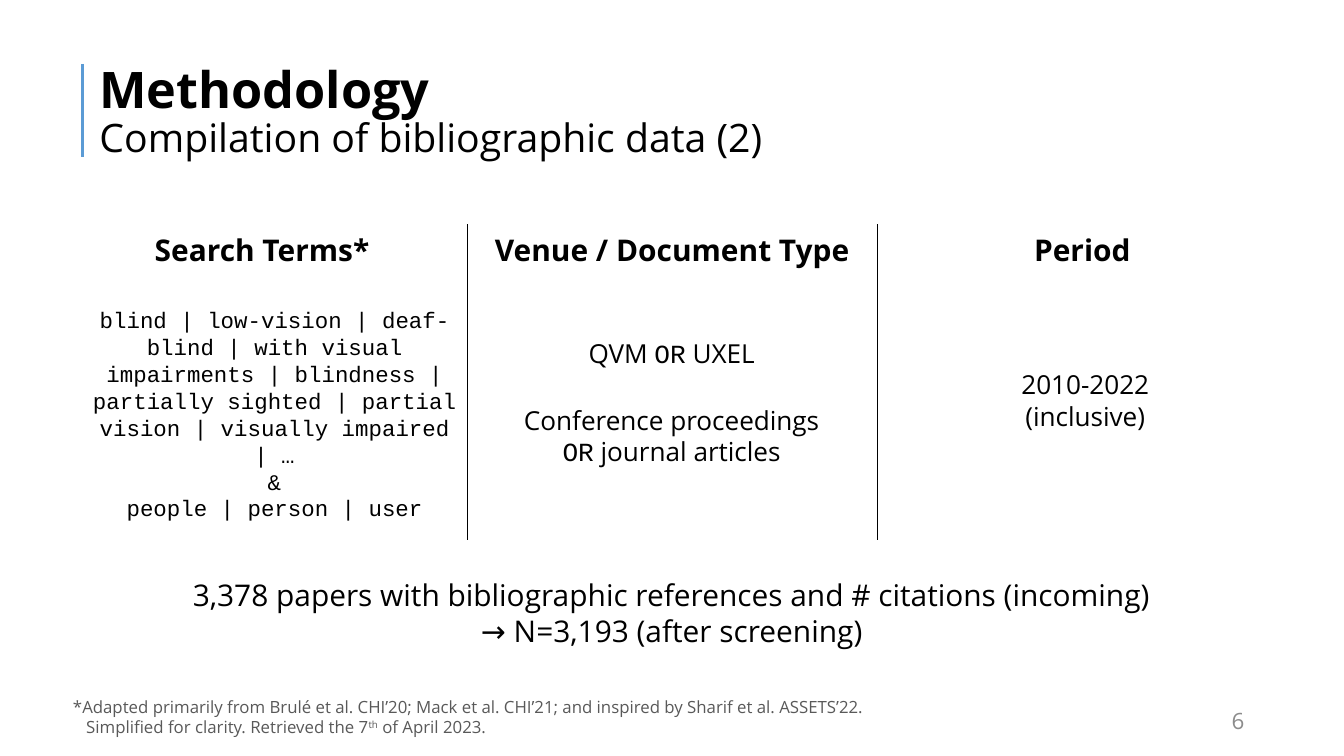
from lxml.etree import SubElement
from pptx import Presentation
from pptx.dml.color import RGBColor
from pptx.enum.shapes import MSO_CONNECTOR as Connector
from pptx.enum.text import MSO_ANCHOR as Anchor, PP_ALIGN as Align
from pptx.oxml.ns import qn
from pptx.util import Cm, Pt

BLACK = RGBColor(0x00, 0x00, 0x00)
BLUE = RGBColor(0x5B, 0x9B, 0xD5)
DARK_GRAY = RGBColor(0x59, 0x59, 0x59)
GRAY = RGBColor(0x8C, 0x8C, 0x8C)
SANS, MONO = "Open Sans", "Courier New"
NO_STYLE = "{2D5ABB26-0587-4C30-8999-92F81FD0307C}"

TITLE = [
    [("Methodology", {"size": 54, "bold": True})],
    [("Compilation of bibliographic data (2)", {"size": 42})],
]
HEADERS = ["Search Terms*", "Venue / Document Type", "Period"]
SEARCH_TERMS = [
    "blind | low-vision | deaf-blind | with visual impairments | blindness | "
    "partially sighted | partial vision | visually impaired | …",
    "&",
    "people | person | user",
]
VENUES = [
    [("QVM ", {}), ("OR", {"font": MONO}), (" UXEL", {})],
    [("Conference proceedings ", {}), ("OR", {"font": MONO}), (" journal articles", {})],
]
PERIOD = ["2010-2022 (inclusive)"]
RESULT = [
    "3,378 papers with bibliographic references and # citations (incoming)",
    "→ N=3,193 (after screening)",
]
FOOTNOTE = [
    "*Adapted primarily from Brulé et al. CHI’20; Mack et al. CHI’21; "
    "and inspired by Sharif et al. ASSETS’22.",
    [("Simplified for clarity. Retrieved the 7", {}), ("th", {"raised": True}),
     (" of April 2023.", {})],
]
PAGE_NUMBER = ["6"]

TABLE_LEFT, TABLE_TOP, COLUMN_WIDTH = 2.16, 8.48, 15.5
ROW_HEIGHTS = [1.95, 10]


def write(frame, paragraphs, size=28, font=SANS, color=BLACK, bold=False,
          align=Align.LEFT, line_spacing=None, gap=0):
    for index, runs in enumerate(paragraphs):
        paragraph = frame.add_paragraph() if index else frame.paragraphs[0]
        paragraph.alignment = align
        if line_spacing:
            paragraph.line_spacing = line_spacing
        if index and gap:
            paragraph.space_before = Pt(gap)
        for text, style in [(runs, {})] if isinstance(runs, str) else runs:
            run = paragraph.add_run()
            run.text = text
            run.font.size = Pt(style.get("size", size))
            run.font.name = style.get("font", font)
            run.font.bold = style.get("bold", bold)
            run.font.color.rgb = color
            if style.get("raised"):
                run.font._element.set("baseline", "30000")


def add_text(slide, box, paragraphs, anchor=Anchor.TOP, **style):
    frame = slide.shapes.add_textbox(*map(Cm, box)).text_frame
    frame.word_wrap = True
    frame.vertical_anchor = anchor
    write(frame, paragraphs, **style)
    return frame


def add_border(cell, side):
    properties = cell._tc.get_or_add_tcPr()
    line = SubElement(properties, qn(f"a:{side}"), w=str(Pt(1)))
    fill = SubElement(line, qn("a:solidFill"))
    SubElement(fill, qn("a:srgbClr"), val=str(BLACK))


def add_criteria_table(slide):
    columns = len(HEADERS)
    shape = slide.shapes.add_table(
        len(ROW_HEIGHTS), columns, Cm(TABLE_LEFT), Cm(TABLE_TOP),
        Cm(COLUMN_WIDTH * columns), Cm(sum(ROW_HEIGHTS)))
    table = shape.table
    table.first_row = table.horz_banding = False
    table._tbl.tblPr.find(qn("a:tableStyleId")).text = NO_STYLE
    for column in table.columns:
        column.width = Cm(COLUMN_WIDTH)
    for row, height in zip(table.rows, ROW_HEIGHTS):
        row.height = Cm(height)
        for index, cell in enumerate(row.cells):
            cell.margin_left = cell.margin_right = Cm(0.38)
            cell.margin_top = cell.margin_bottom = Cm(0.18)
            if index > 0:
                add_border(cell, "lnL")
            if index < columns - 1:
                add_border(cell, "lnR")
            cell.fill.background()
    for cell, header in zip(table.rows[0].cells, HEADERS):
        write(cell.text_frame, [header], size=32, bold=True, align=Align.CENTER)


def add_accent_line(slide):
    line = slide.shapes.add_connector(
        Connector.STRAIGHT, Cm(3.12), Cm(2.41), Cm(3.12), Cm(5.92))
    line.line.color.rgb = BLUE
    line.line.width = Pt(3)
    SubElement(line._element.spPr, qn("a:effectLst"))


def add_footnote(slide):
    frame = add_text(slide, (2.51, 26.21, 39.65, 1.8), FOOTNOTE, size=18, color=DARK_GRAY)
    for paragraph, indent in zip(frame.paragraphs, (-0.5, 0)):
        properties = paragraph._p.get_or_add_pPr()
        properties.set("marL", str(Cm(0.5)))
        properties.set("indent", str(Cm(indent)))


def main():
    presentation = Presentation()
    presentation.slide_width, presentation.slide_height = Cm(50.8), Cm(28.58)
    slide = presentation.slides.add_slide(presentation.slide_layouts[6])

    add_accent_line(slide)
    add_criteria_table(slide)
    add_text(slide, (3.51, 1.52, 43.82, 5.51), TITLE, anchor=Anchor.MIDDLE, line_spacing=0.9)
    add_text(slide, (35.86, 26.49, 11.43, 1.52), PAGE_NUMBER, anchor=Anchor.MIDDLE,
             size=24, color=GRAY, align=Align.RIGHT)
    add_text(slide, (19.3, 12.62, 12.17, 5.05), VENUES, align=Align.CENTER, gap=38)
    add_text(slide, (36.12, 13.82, 9.8, 2.64), PERIOD, align=Align.CENTER)
    add_text(slide, (6.4, 21.67, 38, 3), RESULT, size=32, align=Align.CENTER)
    add_footnote(slide)
    add_text(slide, (3.07, 11.46, 14.61, 7.39), SEARCH_TERMS, size=24, font=MONO,
             align=Align.CENTER)
    presentation.save("out.pptx")


if __name__ == "__main__":
    main()
